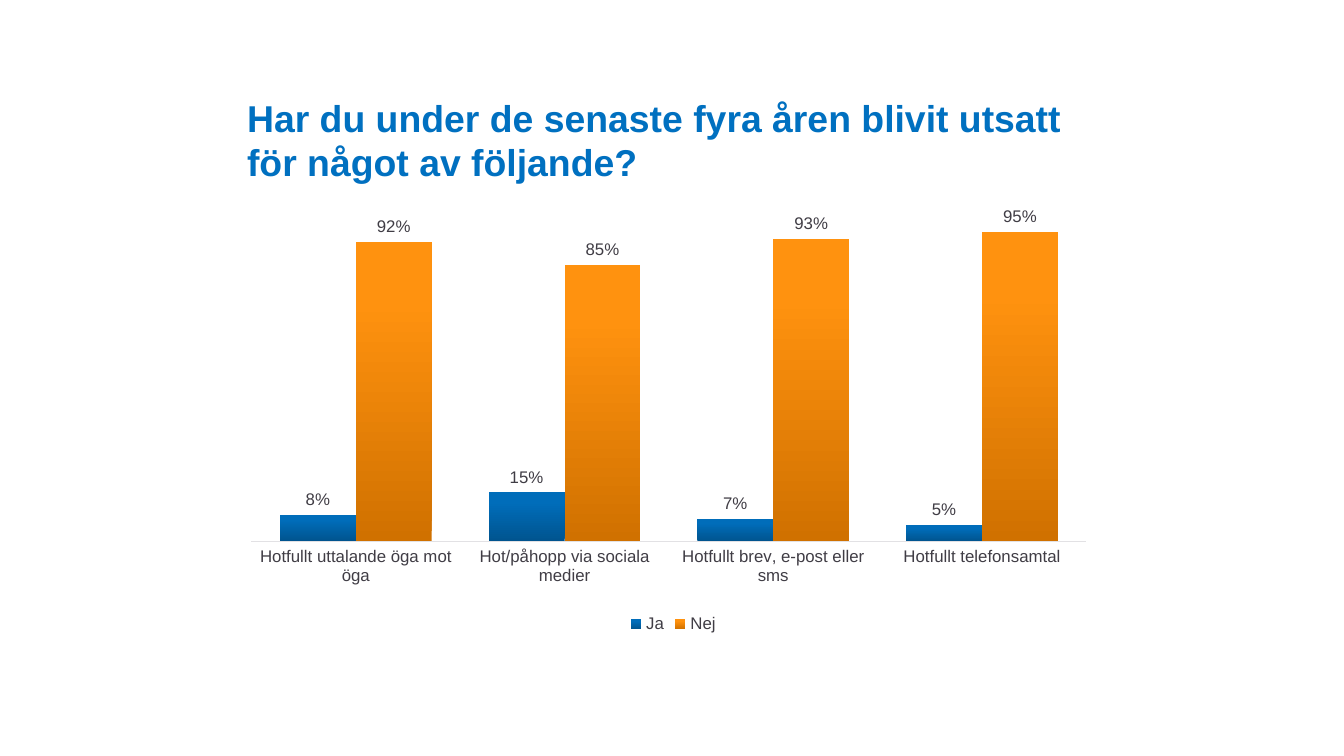
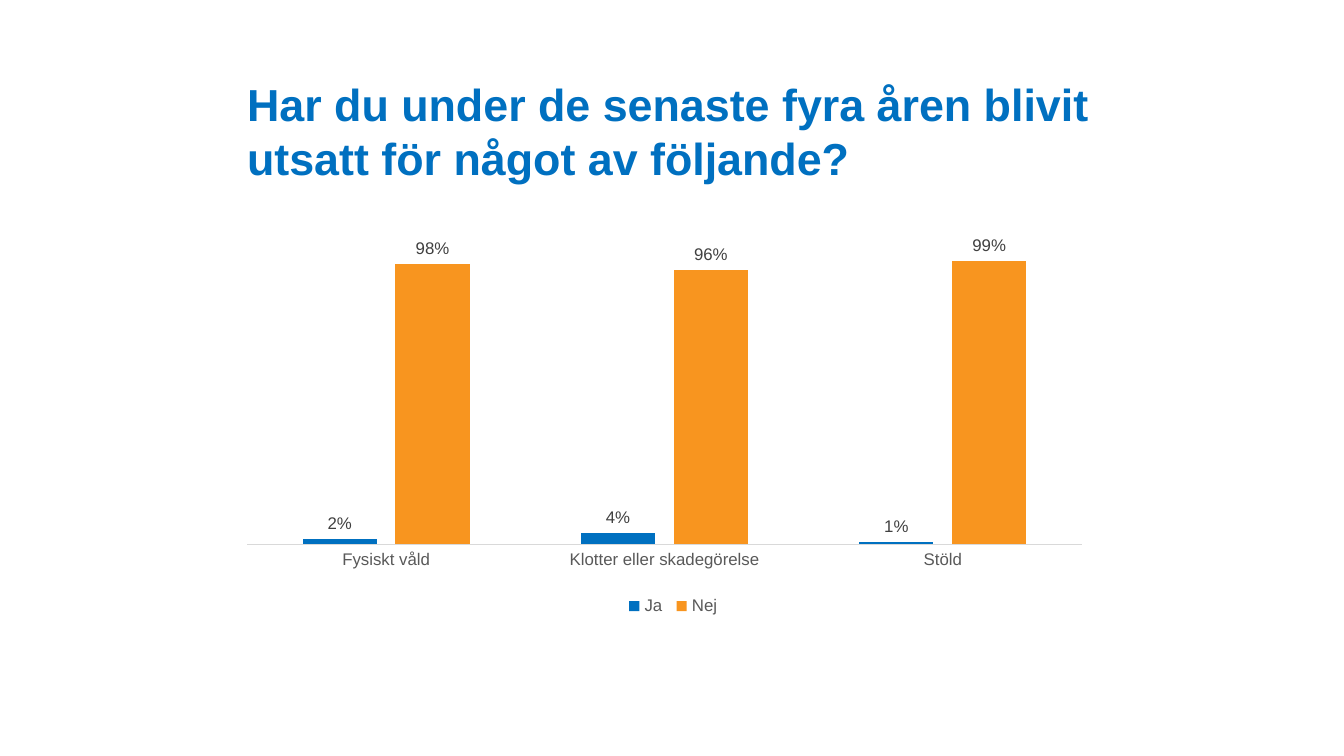
import lxml.etree
import pptx
import pptx.chart.data
import pptx.dml.color
import pptx.enum.chart
import pptx.enum.text
import pptx.oxml.ns
import pptx.util

Cm = pptx.util.Cm
Pt = pptx.util.Pt
qn = pptx.oxml.ns.qn
LegendPosition = pptx.enum.chart.XL_LEGEND_POSITION

FONT = "Arial"
TITLE_BLUE = "0070C0"
QUESTION = "Har du under de senaste fyra åren blivit utsatt för något av följande?"

# Left, top, width, height in centimetres
TITLE_BOX = (4.42, 1.3, 16.61, 2.31)
CHART_BOX = (4.42, 3.66, 16.61, 8.43)

THREATS = dict(
    categories=["Hotfullt uttalande öga mot öga", "Hot/påhopp via sociala medier",
                "Hotfullt brev, e-post eller sms", "Hotfullt telefonsamtal"],
    answers={"Ja": [0.08, 0.15, 0.07, 0.05], "Nej": [0.92, 0.85, 0.93, 0.95]},
    fills=[[(0, "00548F"), (80, "006DBA"), (100, "006DBB")],
           [(0, "D07100"), (80, "FF920F"), (100, "FF9211")]],
    gap=75, overlap=0, top_value=1,
    plot_area=(0.02, 0.05, 0.95, 0.73),
    axis_color="403D45", label_color="403D45", line_color="E2E1E4",
    legend_position=LegendPosition.BOTTOM,
)
CRIMES = dict(
    categories=["Fysiskt våld", "Klotter eller skadegörelse", "Stöld"],
    answers={"Ja": [0.02, 0.04, 0.01], "Nej": [0.98, 0.96, 0.99]},
    fills=["0070C0", "F8951F"],
    gap=150, overlap=-25, top_value=1.2,
    plot_area=(0.015, 0.017, 0.95, 0.77),
    axis_color="595959", label_color="404040", line_color="D9D9D9",
    legend_position=LegendPosition.TOP, legend_area=(0.44, 0.89, 0.12, 0.07),
)


def rgb(color):
    return pptx.dml.color.RGBColor.from_string(color)


def set_font(font, size, color, bold=False):
    font.name = FONT
    font.size = Pt(size)
    font.bold = bold
    font.color.rgb = rgb(color)


def add_text(page, area, text, size=20, color=TITLE_BLUE, bold=False,
             anchor=pptx.enum.text.MSO_ANCHOR.TOP):
    box = page.shapes.add_textbox(*map(Cm, area))
    frame = box.text_frame
    frame.word_wrap = True
    frame.vertical_anchor = anchor
    span = frame.paragraphs[0].add_run()
    span.text = text
    set_font(span.font, size, color, bold)
    return box


def set_layout(parent, index, area, inner=False):
    """Fix the place of a chart part, as fractions of the chart."""
    for old in parent.findall(qn("c:layout")):
        parent.remove(old)
    layout = lxml.etree.Element(qn("c:layout"))
    manual = lxml.etree.SubElement(layout, qn("c:manualLayout"))
    settings = [("layoutTarget", "inner")] if inner else []
    settings += [("xMode", "edge"), ("yMode", "edge")]
    settings += zip("xywh", area)
    for name, value in settings:
        lxml.etree.SubElement(manual, qn("c:" + name), val=str(value))
    parent.insert(index, layout)


def fill_series(series, paint):
    """Fill with one colour, or with gradient stops from bottom to top."""
    fill = series.format.fill
    if isinstance(paint, str):
        fill.solid()
        fill.fore_color.rgb = rgb(paint)
        return
    fill.gradient()
    fill.gradient_angle = 90
    stops = next(series.format.fill._xPr.iter(qn("a:gsLst")))
    for old in list(stops):
        stops.remove(old)
    for percent, color in paint:
        stop = lxml.etree.SubElement(stops, qn("a:gs"), pos=str(percent * 1000))
        lxml.etree.SubElement(stop, qn("a:srgbClr"), val=color)


def add_answer_chart(page, area, categories, answers, fills, gap, overlap, top_value,
                     plot_area, axis_color, label_color, line_color,
                     legend_position, legend_area=None):
    data = pptx.chart.data.CategoryChartData(number_format="0%")
    data.categories = categories
    for name, values in answers.items():
        data.add_series(name, values)
    chart = page.shapes.add_chart(pptx.enum.chart.XL_CHART_TYPE.COLUMN_CLUSTERED,
                                  *map(Cm, area), data).chart
    chart.has_title = False
    set_font(chart.font, 10, "000000")

    # Axes
    axis = chart.category_axis
    axis.major_tick_mark = axis.minor_tick_mark = pptx.enum.chart.XL_TICK_MARK.NONE
    axis.format.line.color.rgb = rgb(line_color)
    axis.format.line.width = Pt(0.75)
    set_font(axis.tick_labels.font, 9, axis_color)
    scale = chart.value_axis
    scale.minimum_scale, scale.maximum_scale = 0, top_value
    scale.has_major_gridlines = False
    scale.tick_labels.number_format = "0%"
    scale.tick_labels.number_format_is_linked = False
    scale.visible = False

    # Columns and their labels
    plot = chart.plots[0]
    plot.gap_width, plot.overlap = gap, overlap
    plot.vary_by_categories = False
    for series, paint in zip(plot.series, fills):
        series.invert_if_negative = False
        fill_series(series, paint)
        labels = series.data_labels
        labels.show_value = True
        labels.number_format = "0%"
        labels.number_format_is_linked = False
        labels.position = pptx.enum.chart.XL_LABEL_POSITION.OUTSIDE_END
        set_font(labels.font, 9, label_color)
    set_layout(chart._chartSpace.chart.plotArea, 0, plot_area, inner=True)

    # Legend
    chart.has_legend = True
    legend = chart.legend
    legend.position = legend_position
    legend.include_in_layout = False
    set_font(legend.font, 9, axis_color)
    if legend_area:
        set_layout(legend._element, 1, legend_area)


def add_question_page(deck, title_size, chart):
    page = deck.slides.add_slide(deck.slide_layouts[6])
    add_text(page, TITLE_BOX, QUESTION, size=title_size, bold=True,
             anchor=pptx.enum.text.MSO_ANCHOR.BOTTOM)
    add_answer_chart(page, CHART_BOX, **chart)


def main():
    deck = pptx.Presentation()
    deck.slide_width, deck.slide_height = Cm(25.4), Cm(14.29)
    add_question_page(deck, 20, THREATS)
    add_question_page(deck, 24, CRIMES)
    deck.save("out.pptx")


if __name__ == "__main__":
    main()
